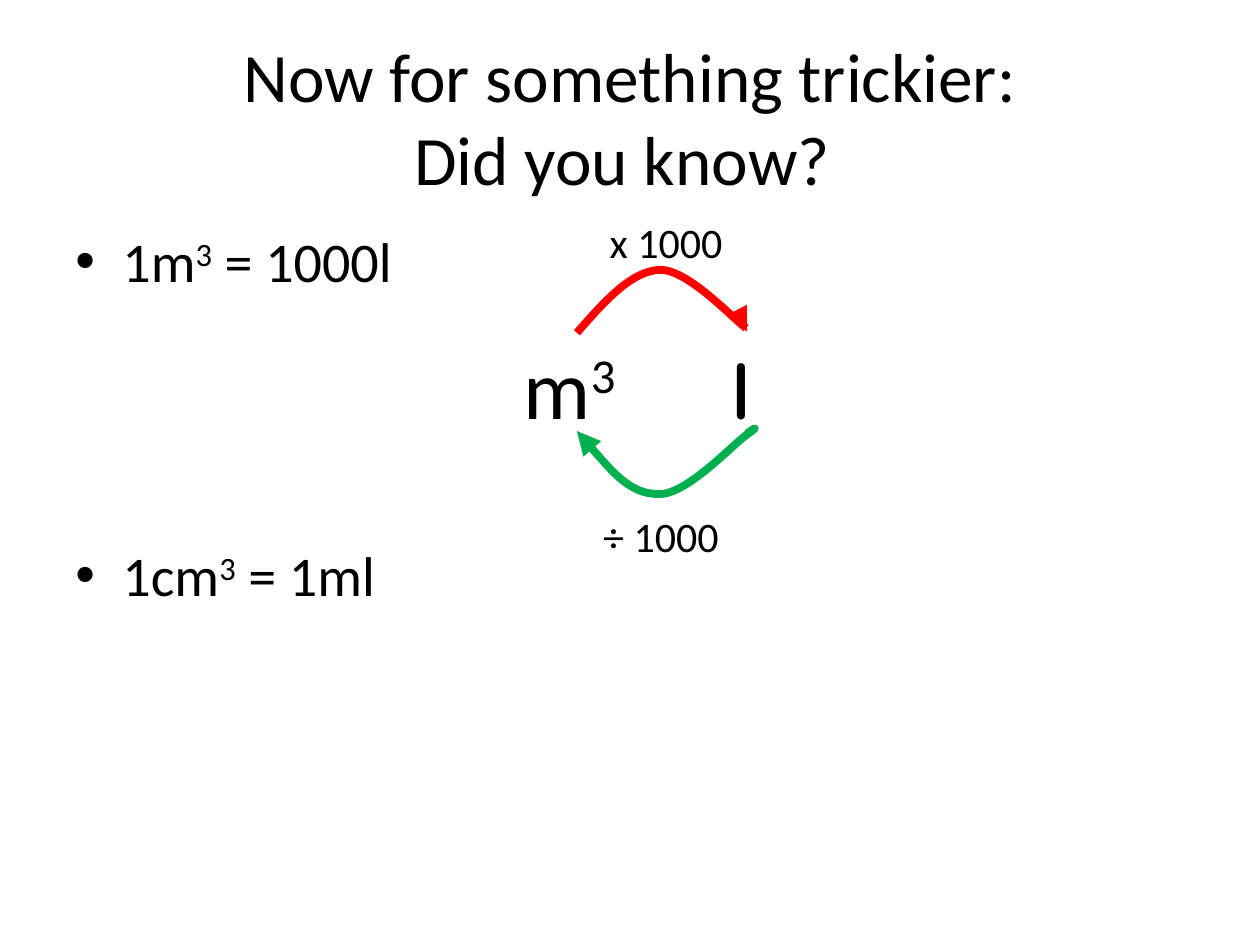
from lxml.etree import SubElement
from pptx import Presentation
from pptx.dml.color import RGBColor
from pptx.enum.text import MSO_ANCHOR, MSO_AUTO_SIZE, PP_ALIGN
from pptx.oxml.ns import qn
from pptx.util import Cm, Pt

BLACK = RGBColor(0x00, 0x00, 0x00)
RED = RGBColor(0xFF, 0x00, 0x00)
GREEN = RGBColor(0x00, 0xB0, 0x50)

TITLE_ONLY = 5
UNIT_TOP, UNIT_SIZE = 6.63, (2.79, 2.31)
FACTOR_SIZE = (3, 1.27)

# Start point, then three points for each Bézier segment, in centimetres.
TO_LITRES = [(11.63, 6.71), (12.19, 6.07), (12.73, 5.46), (13.31, 5.44),
             (13.87, 5.44), (14.78, 6.43), (15.06, 6.63),
             (15.37, 6.83), (15.21, 6.76), (15.06, 6.68)]
TO_CUBIC_METRES = [(11.63, 8.69), (12.17, 9.32), (12.7, 9.96), (13.28, 9.96),
                   (13.84, 9.98), (14.76, 8.97), (15.06, 8.76),
                   (15.34, 8.56), (15.19, 8.64), (15.06, 8.74)]


class SlideBuilder:
    def __init__(self, slide, font="Calibri", color=BLACK):
        self.slide = slide
        self.font = font
        self.color = color

    def style(self, run, size, font=None, bold=False):
        run.font.name = font or self.font
        run.font.size = Pt(size)
        run.font.bold = bold
        run.font.color.rgb = self.color

    def fill_paragraph(self, paragraph, text, size, **style):
        """Add the text as runs; parts between ^ marks are superscript."""
        for index, part in enumerate(text.split("^")):
            run = paragraph.add_run()
            run.text = part
            self.style(run, size, **style)
            if index % 2:
                run.font._element.set("baseline", "30000")

    def title(self, text, left, top, width, height, size):
        title = self.slide.shapes.title
        title.left, title.top = Cm(left), Cm(top)
        title.width, title.height = Cm(width), Cm(height)
        frame = title.text_frame
        frame.text = text
        frame.auto_size = MSO_AUTO_SIZE.NONE
        frame.vertical_anchor = MSO_ANCHOR.MIDDLE
        paragraph = frame.paragraphs[0]
        paragraph.alignment = PP_ALIGN.CENTER
        for run in paragraph.runs:
            self.style(run, size)

    def text_box(self, left, top, width, height):
        box = self.slide.shapes.add_textbox(Cm(left), Cm(top), Cm(width), Cm(height))
        box.text_frame.word_wrap = True
        return box.text_frame

    def label(self, text, left, top, width, height, size, **style):
        frame = self.text_box(left, top, width, height)
        self.fill_paragraph(frame.paragraphs[0], text, size, **style)

    def bullets(self, items, left, top, width, height, size):
        """Show (text, points of space before) pairs as a bulleted list."""
        frame = self.text_box(left, top, width, height)
        for index, (text, space) in enumerate(items):
            paragraph = frame.add_paragraph() if index else frame.paragraphs[0]
            paragraph.space_before = Pt(space)
            properties = paragraph._p.get_or_add_pPr()
            properties.set("marL", str(Cm(0.95)))
            properties.set("indent", str(-Cm(0.95)))
            SubElement(properties, qn("a:buFont"), typeface="Arial")
            SubElement(properties, qn("a:buChar"), char="•")
            self.fill_paragraph(paragraph, text, size)

    def curved_arrow(self, points, color, arrow_end, weight=4.5):
        """Draw a Bézier curve; arrow_end is headEnd (start) or tailEnd (finish)."""
        (start_x, start_y), *rest = [(Cm(x), Cm(y)) for x, y in points]
        builder = self.slide.shapes.build_freeform(start_x, start_y)
        builder.add_line_segments(rest, close=False)
        arrow = builder.convert_to_shape()
        arrow.shadow.inherit = False
        arrow.fill.background()
        arrow.line.color.rgb = color
        arrow.line.width = Pt(weight)
        SubElement(arrow.line._get_or_add_ln(), qn(f"a:{arrow_end}"), type="triangle")

        outline = next(arrow._element.iter(qn("a:path")))
        segments = outline.findall(qn("a:lnTo"))
        for index in range(0, len(segments), 3):
            curve = SubElement(outline, qn("a:cubicBezTo"))
            for segment in segments[index:index + 3]:
                curve.append(segment[0])
                outline.remove(segment)


def main():
    presentation = Presentation()
    presentation.slide_width, presentation.slide_height = Cm(25.4), Cm(19.05)
    slide = presentation.slides.add_slide(presentation.slide_layouts[TITLE_ONLY])
    builder = SlideBuilder(slide)

    builder.title("Now for something trickier:\vDid you know? ",
                  1.27, 0.76, 22.86, 3.18, size=39.6)
    builder.bullets([("1m^3^ = 1000l", 6.4), ("1cm^3^ = 1ml", 141)],
                    1.27, 4.45, 22.86, 12.57, size=32)
    builder.label("m^3", 10.31, UNIT_TOP, *UNIT_SIZE, size=48)
    builder.curved_arrow(TO_LITRES, RED, "tailEnd")
    builder.curved_arrow(TO_CUBIC_METRES, GREEN, "headEnd")
    builder.label("x 1000", 12.04, 4.24, *FACTOR_SIZE, size=24)
    builder.label("÷ 1000", 11.91, 10.16, *FACTOR_SIZE, size=24)
    builder.label("l", 14.5, UNIT_TOP, *UNIT_SIZE, size=48, font="Comic Neue", bold=True)

    presentation.save("out.pptx")


if __name__ == "__main__":
    main()
